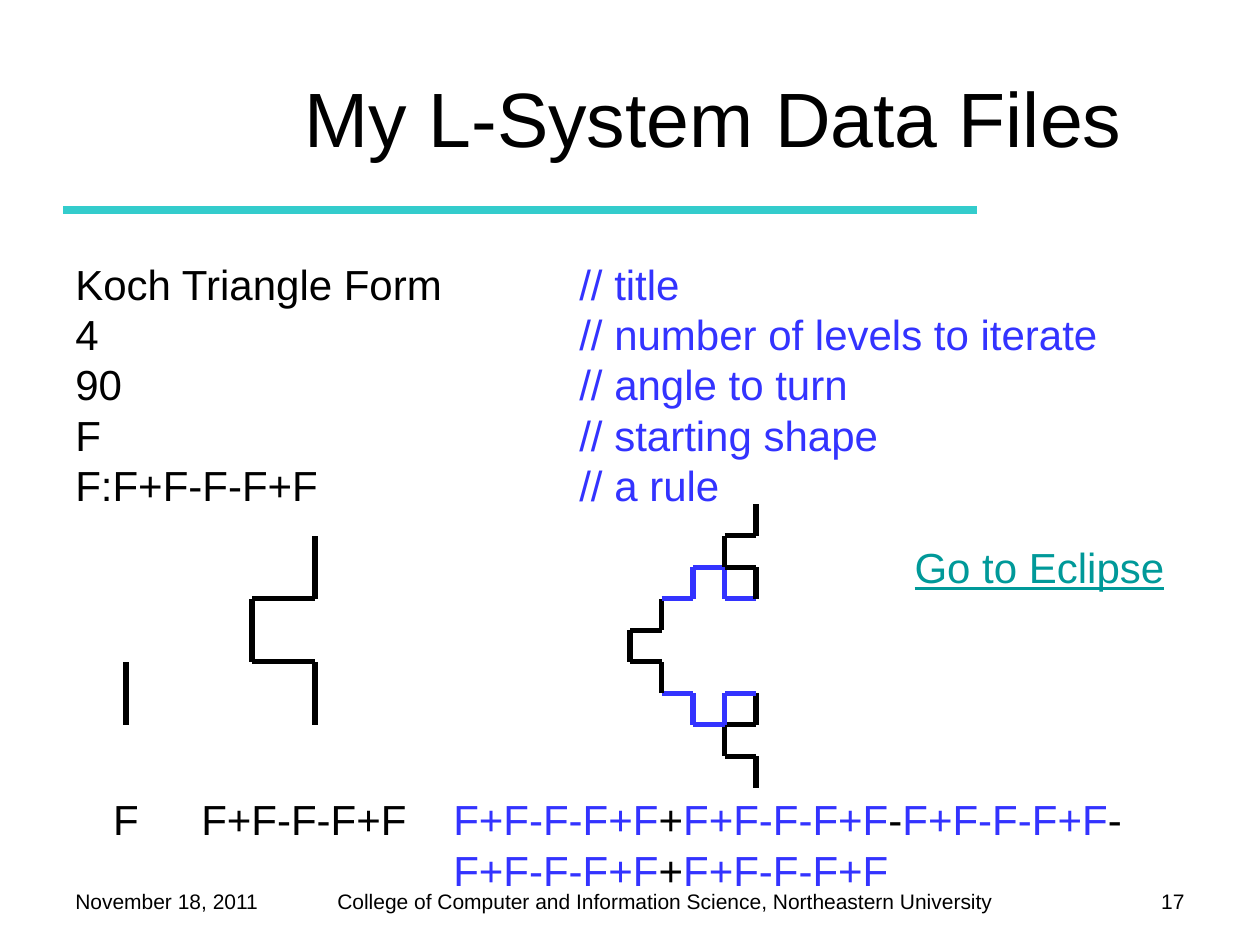
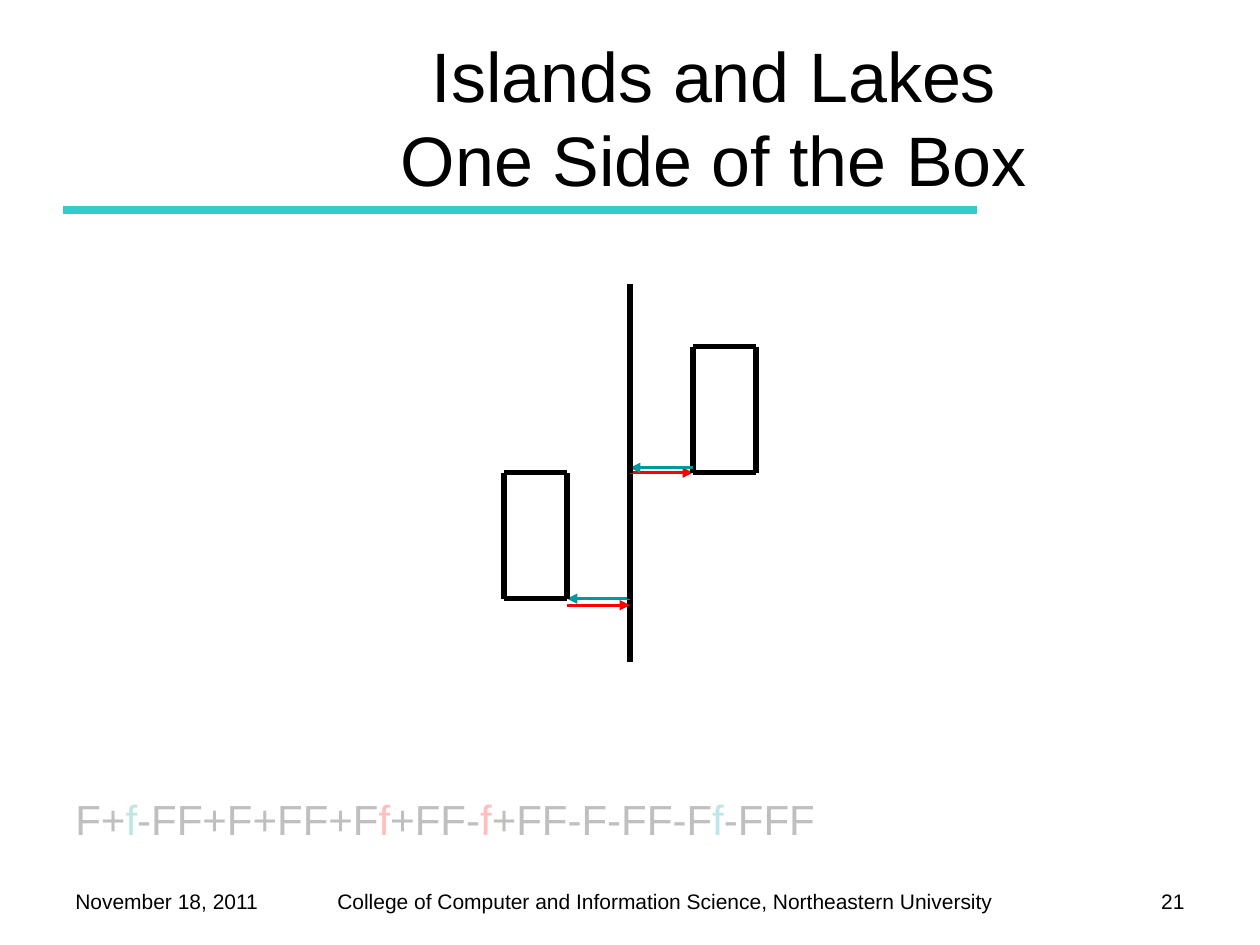
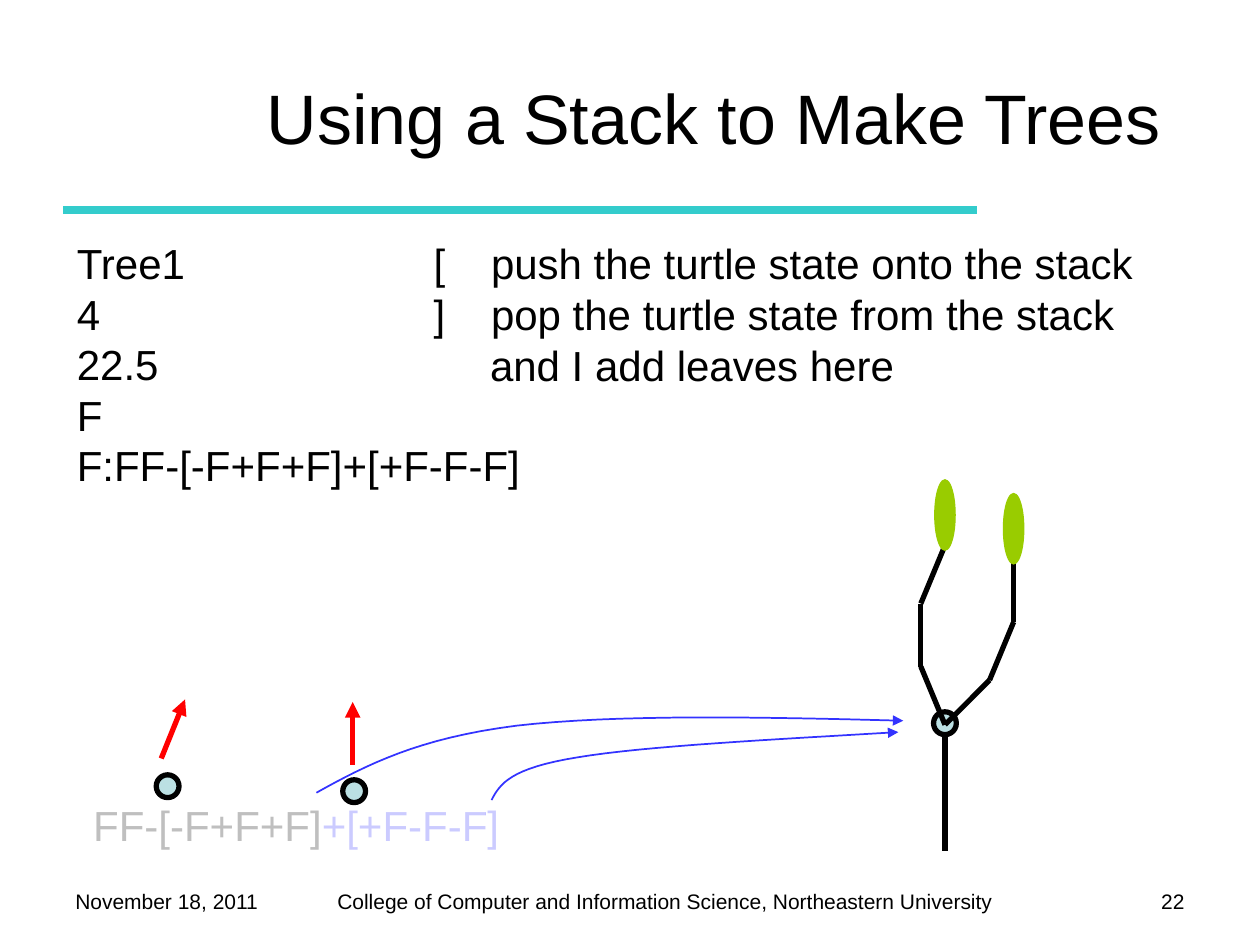
from dataclasses import dataclass
from itertools import groupby
from math import cos, radians, sin

from lxml import etree
from pptx import Presentation
from pptx.dml.color import RGBColor
from pptx.enum.shapes import MSO_CONNECTOR, MSO_SHAPE
from pptx.enum.text import MSO_ANCHOR, MSO_AUTO_SIZE, PP_ALIGN
from pptx.oxml.ns import qn
from pptx.util import Cm, Pt

LEFT, CENTER, RIGHT = PP_ALIGN.LEFT, PP_ALIGN.CENTER, PP_ALIGN.RIGHT
MIDDLE, FIXED = MSO_ANCHOR.MIDDLE, MSO_AUTO_SIZE.NONE
STRAIGHT = MSO_CONNECTOR.STRAIGHT
RECTANGLE, OVAL = MSO_SHAPE.RECTANGLE, MSO_SHAPE.OVAL
TITLE_ONLY = 5

STEP = 1.27  # length of one turtle step in cm
KOCH_RULE = "F+F-F-F+F"
NODE_SIZE = 0.46
LEAF_WIDTH, LEAF_HEIGHT = 0.41, 1.42


@dataclass(frozen=True)
class Theme:
    font: str = "Arial"
    black: RGBColor = RGBColor(0x00, 0x00, 0x00)
    white: RGBColor = RGBColor(0xFF, 0xFF, 0xFF)
    blue: RGBColor = RGBColor(0x33, 0x33, 0xFF)
    teal: RGBColor = RGBColor(0x00, 0x99, 0x99)
    red: RGBColor = RGBColor(0xFF, 0x00, 0x00)
    rule: RGBColor = RGBColor(0x33, 0xCC, 0xCC)
    node: RGBColor = RGBColor(0xBB, 0xE0, 0xE3)
    leaf: RGBColor = RGBColor(0x99, 0xCC, 0x00)
    title_size: int = 40
    body_size: int = 24
    footer_size: int = 12
    pen: float = 3
    move_pen: float = 1.5
    curve_pen: float = 1
    rule_pen: float = 4.5


class Deck:
    """Holds the style and the slide being drawn."""

    def __init__(self, theme):
        self.theme = theme
        self.presentation = Presentation()
        self.presentation.slide_width = Cm(25.4)
        self.presentation.slide_height = Cm(19.05)
        self.slide = None

    def new_slide(self, number, title_lines, title_size=None):
        theme = self.theme
        layout = self.presentation.slide_layouts[TITLE_ONLY]
        self.slide = self.presentation.slides.add_slide(layout)
        # Rule and footer
        self.line((1.27, 4.24), (19.69, 4.24), theme.rule, theme.rule_pen)
        footers = (("College of Computer and Information Science, Northeastern University",
                    6.55, 13.97, LEFT),
                   ("November 18, 2011", 1.27, 4.45, LEFT),
                   (str(number), 22.02, 2.11, RIGHT))
        for footer, left, width, align in footers:
            self.text((left, 17.78, width, 0.8), [[(footer, theme.black)]],
                      theme.footer_size, align)
        # Title
        title = self.slide.shapes.title
        title.left, title.top, title.width, title.height = map(Cm, (4.65, 0.76, 19.48, 3.18))
        frame = title.text_frame
        frame.auto_size, frame.vertical_anchor = FIXED, MIDDLE
        paragraph = frame.paragraphs[0]
        paragraph.alignment = CENTER
        for index, words in enumerate(title_lines):
            if index:
                paragraph.add_line_break()
            self.run(paragraph, words, theme.black, title_size or theme.title_size)

    def run(self, paragraph, words, color, size):
        run = paragraph.add_run()
        run.text = words
        run.font.name, run.font.size = self.theme.font, Pt(size)
        run.font.color.rgb = color
        return run

    def text(self, box, lines, size=None, align=LEFT, tabs=(), underline=False):
        """Each line is a list of (words, color) runs."""
        frame = self.slide.shapes.add_textbox(*map(Cm, box)).text_frame
        frame.word_wrap = True
        for index, runs in enumerate(lines):
            paragraph = frame.add_paragraph() if index else frame.paragraphs[0]
            paragraph.alignment = align
            if tabs:
                tab_list = etree.SubElement(paragraph._p.get_or_add_pPr(), qn("a:tabLst"))
                for position in tabs:
                    etree.SubElement(tab_list, qn("a:tab"), pos=str(Cm(position)), algn="l")
            for words, color in runs:
                run = self.run(paragraph, words, color, size or self.theme.body_size)
                if underline:
                    run.font.underline = True

    def pen(self, shape, color, width, arrow):
        shape.line.color.rgb, shape.line.width = color, Pt(width)
        if arrow:
            etree.SubElement(shape.line._get_or_add_ln(), qn("a:tailEnd"), type="triangle")

    def line(self, start, end, color, width, arrow=False):
        connector = self.slide.shapes.add_connector(STRAIGHT, *map(Cm, (*start, *end)))
        self.pen(connector, color, width, arrow)
        etree.SubElement(connector._element.spPr, qn("a:effectLst"))

    def shape(self, kind, box, fill, outline=None, width=0.75):
        shape = self.slide.shapes.add_shape(kind, *map(Cm, box))
        shape.shadow.inherit = False
        shape.fill.solid()
        shape.fill.fore_color.rgb = fill
        if outline is None:
            shape.line.fill.background()
        else:
            self.pen(shape, outline, width, False)
        return shape

    def veils(self, edges, top):
        """Fade a row of symbols with translucent white boxes between the edges."""
        for left, right in zip(edges, edges[1:]):
            veil = self.shape(RECTANGLE, (left, top, right - left, STEP), self.theme.white)
            color = veil._element.spPr.find(".//" + qn("a:srgbClr"))
            etree.SubElement(color, qn("a:alpha"), val="75000")

    def node(self, x, y):
        self.shape(OVAL, (x - NODE_SIZE / 2, y - NODE_SIZE / 2, NODE_SIZE, NODE_SIZE),
                   self.theme.node, self.theme.black, self.theme.pen)

    def curve(self, start, *pieces):
        """Draw an arrow along cubic pieces, each (control, control, end)."""
        points, samples = [start], 16
        for piece in pieces:
            corners = (points[-1], *piece)
            for index in range(1, samples + 1):
                t = index / samples
                weights = ((1 - t) ** 3, 3 * t * (1 - t) ** 2, 3 * t * t * (1 - t), t ** 3)
                points.append(tuple(sum(w * c[axis] for w, c in zip(weights, corners))
                                    for axis in (0, 1)))
        places = [(Cm(x), Cm(y)) for x, y in points]
        builder = self.slide.shapes.build_freeform(*places[0])
        builder.add_line_segments(places[1:], close=False)
        shape = builder.convert_to_shape()
        shape.shadow.inherit = False
        shape.fill.background()
        self.pen(shape, self.theme.blue, self.theme.curve_pen, True)

    def turtle(self, commands, state, step=STEP, angle=90, color=None, moves=()):
        """Follow the commands from (x, y, heading); return the state and branch tips.

        F draws, f moves as an arrow styled by the next (color, offset) of moves.
        """
        theme, moves = self.theme, iter(moves)
        stack, tips = [], []
        for command, group in groupby(commands):
            count = len(list(group))
            x, y, heading = state
            if command in "Ff":
                length = step * count
                end = (x + length * cos(radians(heading)), y - length * sin(radians(heading)))
                if command == "F":
                    self.line((x, y), end, color or theme.black, theme.pen)
                else:
                    move_color, offset = next(moves)
                    self.line((x, y + offset), (end[0], end[1] + offset),
                              move_color, theme.move_pen, True)
                state = (*end, heading)
            elif command in "+-":
                turn = angle if command == "+" else -angle
                state = (x, y, heading + turn * count)
            elif command == "[":
                stack.append(state)
            else:
                tips.append((x, y))
                state = stack.pop()
        return state, tips


def data_files_slide(deck):
    theme = deck.theme
    deck.new_slide(17, ["My L-System Data Files"], 44)
    # Data file with comments
    entries = (("Koch Triangle Form", "// title"), ("4", "// number of levels to iterate"),
               ("90", "// angle to turn"), ("F", "// starting shape"),
               ("F:" + KOCH_RULE, "// a rule"))
    deck.text((1.27, 5.08, 22.23, 5.33),
              [[(entry + "\t", theme.black), (comment, theme.blue)] for entry, comment in entries],
              tabs=[10.16])
    # Levels 0 and 1
    deck.turtle("F", (2.54, 14.61, 90))
    deck.text((1.27, 15.88, 2.54, 1.27), [[("F", theme.black)]], align=CENTER)
    deck.turtle(KOCH_RULE, (6.35, 14.61, 90))
    deck.text((3.81, 15.88, 5.08, 1.27), [[(KOCH_RULE, theme.black)]])
    # Level 2: every F of the rule becomes the whole rule
    state, runs = (15.24, 15.88, 90), []
    for index, turn in enumerate(["", *KOCH_RULE.replace("F", "")]):
        color = theme.blue if index % 2 else theme.black
        state, _ = deck.turtle(turn + KOCH_RULE, state, STEP / 2, color=color)
        if turn:
            runs.append((turn, theme.black))
        runs.append((KOCH_RULE, theme.blue))
    deck.text((8.89, 15.88, 15.24, 2.29), [runs])
    deck.text((17.78, 10.8, 6.35, 1.27), [[("Go to Eclipse", theme.teal)]],
              align=CENTER, underline=True)


def islands_slide(deck):
    theme = deck.theme
    deck.new_slide(21, ["Islands and Lakes", "One Side of the Box"])
    # Command string, moves coloured as their arrows
    draws = ("F+", "-FF+F+FF+F", "+FF-", "+FF-F-FF-F", "-FFF")
    moves = ((theme.teal, 0), (theme.red, 0.13), (theme.red, 0), (theme.teal, -0.1))
    runs = [(draws[0], theme.black)]
    for (color, _), draw in zip(moves, draws[1:]):
        runs += [("f", color), (draw, theme.black)]
    deck.text((1.27, 15.88, 15.57, 1.27), [runs])
    # Path of the turtle
    deck.turtle("f".join(draws), (12.7, 13.34, 90), moves=moves)
    deck.veils((1.27, 2.02, 2.77, 4.04, 5.11, 6.63, 7.61, 7.91, 9.38, 9.94,
                11.42, 12.22, 13.52, 14.31, 14.62, 16.59), 15.88)


def trees_slide(deck):
    theme = deck.theme
    trunk, branches = "FF", ("-[-F+F+F]", "+[+F-F-F]")
    deck.new_slide(22, ["Using a Stack to Make Trees"])
    # Data file and the two stack commands
    entries = ("Tree1\t[\tpush the turtle state onto the stack",
               "4\t]\tpop the turtle state from the stack",
               "22.5", "F", "F:" + trunk + "".join(branches))
    deck.text((1.3, 4.67, 21.97, 5.33), [[(entry, theme.black)] for entry in entries],
              tabs=[7.19, 8.35])
    deck.text((9.63, 6.71, 9.02, 1.27), [[("and I add leaves here", theme.black)]])
    # Command string
    deck.text((1.63, 16, 9.02, 1.27),
              [[(trunk + branches[0], theme.black), (branches[1], theme.blue)]])
    deck.veils((1.73, 3.23, 3.44, 6.25, 6.5, 7.24, 9.79, 10.31), 16.1)
    # Tree with a leaf at each branch tip
    state, _ = deck.turtle(trunk, (19.05, 17.15, 90))
    deck.node(19.05, 14.58)
    _, tips = deck.turtle("".join(branches), state, angle=22.5)
    for x, y in tips:
        deck.shape(OVAL, (x - LEAF_WIDTH / 2, y + 0.1 - LEAF_HEIGHT, LEAF_WIDTH, LEAF_HEIGHT),
                   theme.leaf, theme.leaf)
    # Saved states and where popping returns to
    deck.curve((6.38, 15.98), ((7.39, 15.42), (8.43, 14.88), (10.41, 14.63)),
               ((12.4, 14.4), (15.29, 14.45), (18.21, 14.53)))
    deck.curve((9.91, 16.13), ((10.08, 15.8), (10.29, 15.49), (11.63, 15.27)),
               ((13, 15.04), (15.57, 14.91), (18.11, 14.76)))
    for node, start, end in (((3.38, 15.85), (3.25, 15.29), (3.73, 14.1)),
                             ((7.14, 15.95), (7.11, 15.42), (7.11, 14.15))):
        deck.node(*node)
        deck.line(start, end, theme.red, theme.pen, True)


def main():
    deck = Deck(Theme())
    data_files_slide(deck)
    islands_slide(deck)
    trees_slide(deck)
    deck.presentation.save("out.pptx")


if __name__ == "__main__":
    main()
